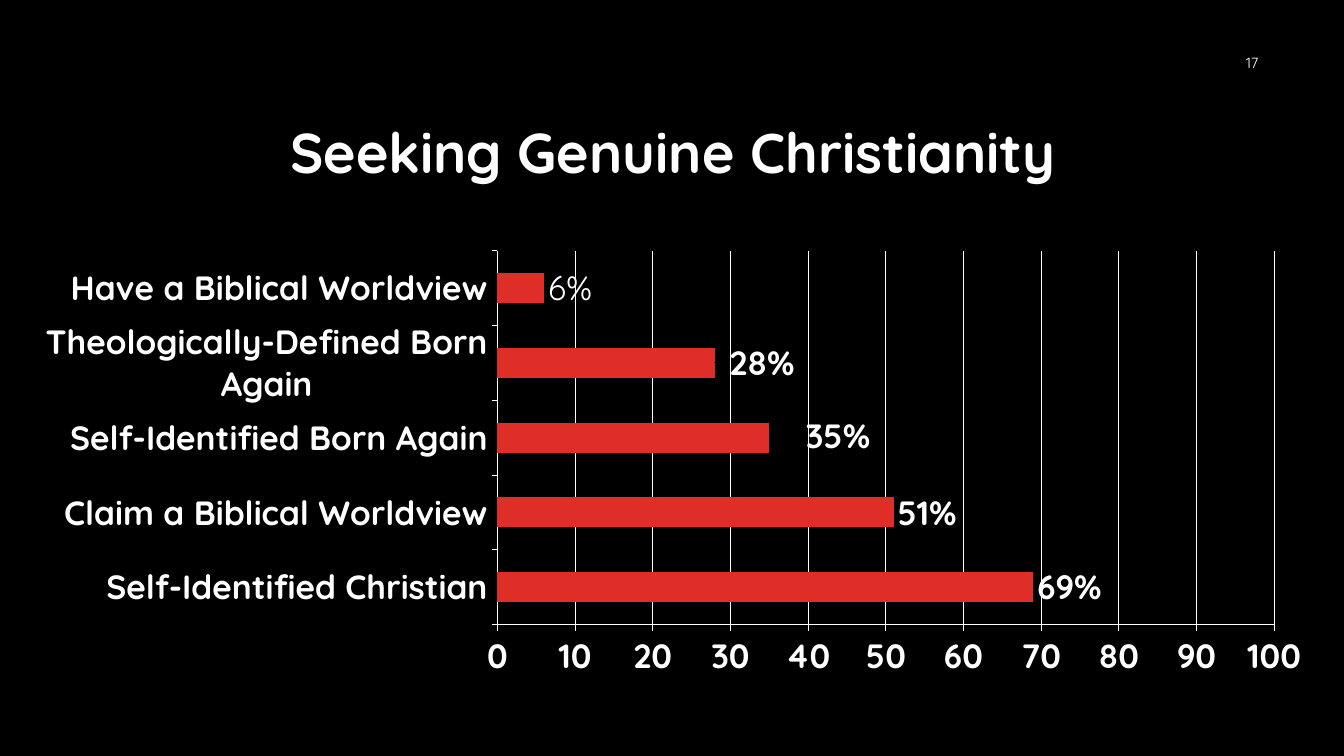
import pptx
import pptx.chart.data
import pptx.dml.color
import pptx.enum.chart
import pptx.enum.text
import pptx.oxml
import pptx.oxml.ns
import pptx.util
from pptx.util import Inches

FONT = "Quicksand"
WHITE = "FFFFFF"
RED = "DF2E28"
GROUPS = [
    ("Self-Identified Christian", 69),
    ("Claim a Biblical Worldview", 51),
    ("Self-Identified Born Again", 35),
    ("Theologically-Defined Born Again", 28),
    ("Have a Biblical Worldview", 6),
]
LABEL_SHIFTS = {35: (0.025, -0.004), 28: (0.008, 0)}


def paint(color_format, color):
    color_format.rgb = pptx.dml.color.RGBColor.from_string(color)


def style_font(font, size, bold=False):
    font.name = FONT
    font.size = pptx.util.Pt(size)
    font.bold = bold
    font.fill.solid()
    paint(font.fill.fore_color, WHITE)


def style_line(line_format):
    line_format.width = pptx.util.Pt(0.75)
    line_format.fill.solid()
    paint(line_format.fill.fore_color, WHITE)


def fill_text(shape, text, size, align, bold=False):
    frame = shape.text_frame
    frame.word_wrap = True
    frame.vertical_anchor = pptx.enum.text.MSO_ANCHOR.MIDDLE
    frame.text = text
    paragraph = frame.paragraphs[0]
    paragraph.alignment = align
    style_font(paragraph.runs[0].font, size, bold)
    return paragraph


def manual_layout(**settings):
    """Build a c:layout element from its child names and values, in order."""
    children = "".join(f'<c:{name} val="{value}"/>' for name, value in settings.items())
    return pptx.oxml.parse_xml(
        f'<c:layout {pptx.oxml.ns.nsdecls("c")}>'
        f"<c:manualLayout>{children}</c:manualLayout></c:layout>"
    )


def place_plot(chart):
    plot_area = chart._element.xpath(".//c:plotArea")[0]
    for layout in plot_area.xpath("./c:layout"):
        plot_area.remove(layout)
    plot_area.insert(0, manual_layout(
        layoutTarget="inner", xMode="edge", yMode="edge",
        x=0.365, y=0.02, w=0.594, h=0.843))


def label_bars(series):
    for index, (_, share) in enumerate(GROUPS):
        label = series.points[index].data_label
        label.text_frame.text = f"{share}%"
        run = label.text_frame.paragraphs[0].runs[0]
        style_font(run.font, 24, bold=share != 6)
        label.position = pptx.enum.chart.XL_LABEL_POSITION.OUTSIDE_END
        if share in LABEL_SHIFTS:
            x, y = LABEL_SHIFTS[share]
            idx = series._element.xpath(f"./c:dLbls/c:dLbl/c:idx[@val='{index}']")[0]
            idx.addnext(manual_layout(x=x, y=y))


def add_share_chart(slide):
    data = pptx.chart.data.CategoryChartData()
    data.categories = [group for group, _ in GROUPS]
    data.add_series("Series 1", [share for _, share in GROUPS])
    chart = slide.shapes.add_chart(
        pptx.enum.chart.XL_CHART_TYPE.BAR_CLUSTERED,
        Inches(0.2), Inches(2.4), Inches(12.97), Inches(4.4), data).chart
    chart.has_title = False
    chart.has_legend = False
    style_font(chart.font, 24, bold=True)
    place_plot(chart)

    for axis in (chart.category_axis, chart.value_axis):
        axis.major_tick_mark = pptx.enum.chart.XL_TICK_MARK.OUTSIDE
        style_line(axis.format.line)
        style_font(axis.tick_labels.font, 24, bold=True)
    shares = chart.value_axis
    shares.minimum_scale, shares.maximum_scale, shares.major_unit = 0, 100, 10
    shares.has_major_gridlines = True
    style_line(shares.major_gridlines.format.line)

    plot = chart.plots[0]
    plot.gap_width = 150
    plot.vary_by_categories = False
    bars = plot.series[0]
    bars.format.fill.solid()
    paint(bars.format.fill.fore_color, RED)
    label_bars(bars)


def main():
    deck = pptx.Presentation()
    deck.slide_width, deck.slide_height = Inches(13.33), Inches(7.5)
    slide = deck.slides.add_slide(deck.slide_layouts[5])
    slide.background.fill.solid()
    paint(slide.background.fill.fore_color, "000000")

    title = slide.shapes.title
    title.left, title.top = Inches(0.77), Inches(0.84)
    title.width, title.height = Inches(11.81), Inches(1.41)
    heading = fill_text(title, "Seeking Genuine Christianity", 40,
                        pptx.enum.text.PP_ALIGN.CENTER, bold=True)
    heading.line_spacing = 0.9

    add_share_chart(slide)

    page_number = slide.shapes.add_textbox(
        Inches(9.58), Inches(0.42), Inches(3), Inches(0.4))
    fill_text(page_number, "17", 10.5, pptx.enum.text.PP_ALIGN.RIGHT)
    deck.save("out.pptx")


if __name__ == "__main__":
    main()
